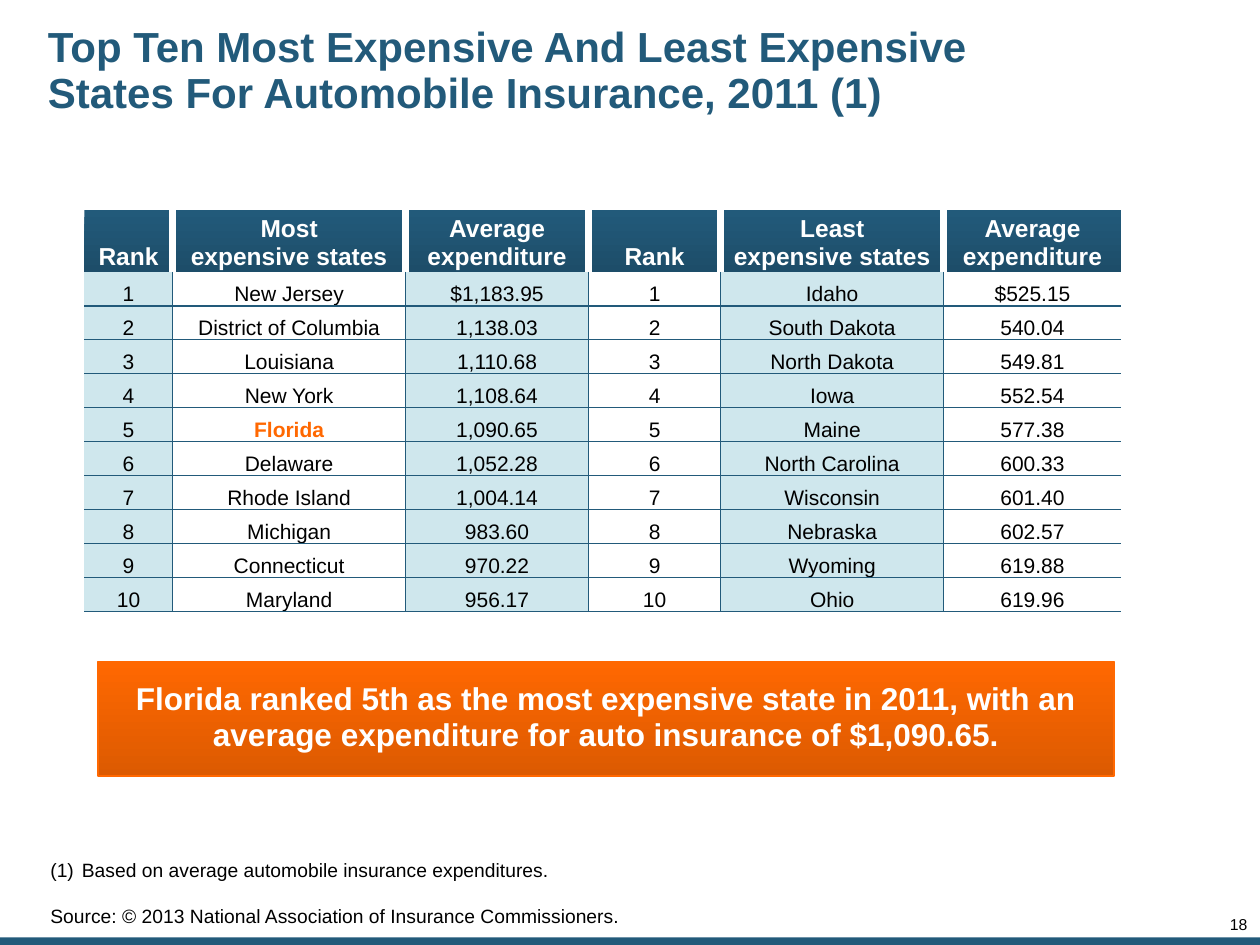
import pptx
import pptx.dml.color
import pptx.enum.shapes
import pptx.enum.text
import pptx.oxml
import pptx.oxml.ns
import pptx.util
from lxml import etree

Inches = pptx.util.Inches
ALIGN = pptx.enum.text.PP_ALIGN
ANCHOR = pptx.enum.text.MSO_ANCHOR
COLORS = {
    "blue": "225A7A", "deep_blue": "1D4D69", "pale": "CFE7ED", "white": "FFFFFF",
    "orange": "FF6801", "deep_orange": "DC5A01", "black": "000000",
}
COLUMN_WIDTHS = [0.7, 1.85, 1.45, 1.05, 1.77, 1.41]
HEADER_HEIGHT, ROW_HEIGHT = 0.46, 0.27
NO_GRID_STYLE = "{2D5ABB26-0587-4C30-8999-92F81FD0307C}"
HEADERS = ["Rank", "Most\nexpensive states", "Average expenditure",
           "Rank", "Least\nexpensive states", "Average\nexpenditure"]
STATES = [
    ("New Jersey", "$1,183.95", "Idaho", "$525.15"),
    ("District of Columbia", "1,138.03", "South Dakota", "540.04"),
    ("Louisiana", "1,110.68", "North Dakota", "549.81"),
    ("New York", "1,108.64", "Iowa", "552.54"),
    ("Florida", "1,090.65", "Maine", "577.38"),
    ("Delaware", "1,052.28", "North Carolina", "600.33"),
    ("Rhode Island", "1,004.14", "Wisconsin", "601.40"),
    ("Michigan", "983.60", "Nebraska", "602.57"),
    ("Connecticut", "970.22", "Wyoming", "619.88"),
    ("Maryland", "956.17", "Ohio", "619.96"),
]


def rgb(name):
    """Return the named colour."""
    return pptx.dml.color.RGBColor.from_string(COLORS[name])


def set_gradient(fill, top, bottom):
    """Fill from the top colour down to the bottom colour."""
    fill.gradient()
    fill.gradient_angle = 270
    for stop, name in zip(fill.gradient_stops, (top, bottom)):
        stop.color.rgb = rgb(name)


def set_text(tf, text, size, color, bold=False, align=ALIGN.LEFT, spacing=1.0):
    """Write text and format every paragraph and run alike."""
    tf.text = text
    for p in tf.paragraphs:
        p.alignment, p.line_spacing = align, spacing
        for r in p.runs:
            r.font.name, r.font.size, r.font.bold = "Arial", pptx.util.Pt(size), bold
            r.font.color.rgb = rgb(color)


def set_frame(tf, anchor, insets):
    """Set wrapping, anchor and left, top, right, bottom insets."""
    tf.word_wrap, tf.vertical_anchor = True, anchor
    tf.margin_left, tf.margin_top, tf.margin_right, tf.margin_bottom = map(Inches, insets)


def add_text(s, box, text, anchor, insets, **style):
    """Add a text box and return its frame."""
    tf = s.shapes.add_textbox(*map(Inches, box)).text_frame
    set_frame(tf, anchor, insets)
    set_text(tf, text, **style)
    return tf


def add_rect(s, box):
    """Add a rectangle without shadow."""
    sp = s.shapes.add_shape(pptx.enum.shapes.MSO_SHAPE.RECTANGLE, *map(Inches, box))
    sp.shadow.inherit = False
    return sp


def add_footer_bar(s):
    """Add the bar along the bottom edge."""
    sp = add_rect(s, (0, 7.44, 10, 0.06))
    sp.fill.solid()
    sp.fill.fore_color.rgb = rgb("blue")
    sp.line.fill.background()


def add_callout(s, box, text):
    """Add the orange conclusion box."""
    sp = add_rect(s, box)
    set_gradient(sp.fill, "orange", "deep_orange")
    sp.line.color.rgb, sp.line.width = rgb("orange"), pptx.util.Pt(1)
    set_frame(sp.text_frame, ANCHOR.MIDDLE, (0.1, 0.05, 0.1, 0.07))
    set_text(sp.text_frame, text, 18, "white", True, ALIGN.CENTER, 0.95)


def add_borders(cell, sides, color, width):
    """Draw solid borders on the given sides, listed in L, R, T, B order."""
    tc_pr = cell._tc.get_or_add_tcPr()
    qn = pptx.oxml.ns.qn
    for side in sides:
        ln = etree.SubElement(tc_pr, qn("a:ln" + side), w=str(pptx.util.Pt(width)))
        fill = etree.SubElement(ln, qn("a:solidFill"))
        etree.SubElement(fill, qn("a:srgbClr"), val=COLORS[color])


def format_cell(cell, text, row, col):
    """Write and style one header or body cell."""
    is_header = row == 0
    sides = ("L" if col > 0 else "") + ("R" if col < len(HEADERS) - 1 else "")
    cell.vertical_anchor = ANCHOR.BOTTOM
    cell.margin_left = cell.margin_top = cell.margin_right = Inches(0.01)
    cell.margin_bottom = Inches(0.01 if is_header else 0)
    if is_header:
        set_text(cell.text_frame, text, 14, "white", True, ALIGN.CENTER)
        add_borders(cell, sides, "white", 4.5)
        set_gradient(cell.fill, "blue", "deep_blue")
        return
    highlight = text == "Florida"
    set_text(cell.text_frame, text, 12, "orange" if highlight else "black",
             highlight, ALIGN.CENTER)
    add_borders(cell, sides + ("TB" if row > 1 else "B"), "blue", 1)
    cell.fill.solid()
    cell.fill.fore_color.rgb = rgb("white" if col % 2 else "pale")


def add_ranking_table(s, left, top):
    """Add the table of most and least expensive states."""
    rows = [HEADERS] + [
        (str(rank), most, high, str(rank), least, low)
        for rank, (most, high, least, low) in enumerate(STATES, 1)
    ]
    height = HEADER_HEIGHT + ROW_HEIGHT * len(STATES)
    table = s.shapes.add_table(len(rows), len(HEADERS), Inches(left), Inches(top),
                               Inches(sum(COLUMN_WIDTHS)), Inches(height)).table
    table.horz_banding = False
    table._tbl.tblPr.find(pptx.oxml.ns.qn("a:tableStyleId")).text = NO_GRID_STYLE
    for column, width in zip(table.columns, COLUMN_WIDTHS):
        column.width = Inches(width)
    for i, values in enumerate(rows):
        table.rows[i].height = Inches(ROW_HEIGHT if i else HEADER_HEIGHT)
        for j, text in enumerate(values):
            format_cell(table.cell(i, j), text, i, j)


def add_footnotes(s):
    """Add the numbered note and the source line."""
    tf = add_text(s, (0, 6.8, 8.32, 0.71),
                  "Based on average automobile insurance expenditures.\n"
                  "Source: © 2013 National Association of Insurance Commissioners.",
                  ANCHOR.BOTTOM, (0.4, 0, 0, 0.15), size=11, color="black")
    note, source = tf.paragraphs
    p_pr = note._p.get_or_add_pPr()
    p_pr.set("marL", str(Inches(0.25)))
    p_pr.set("indent", str(Inches(-0.25)))
    etree.SubElement(p_pr, pptx.oxml.ns.qn("a:buAutoNum"), type="arabicParenBoth")
    source.space_before = pptx.util.Pt(13)


def main():
    """Build and save the slide."""
    prs = pptx.Presentation()
    prs.slide_width, prs.slide_height = Inches(10), Inches(7.5)
    s = prs.slides.add_slide(prs.slide_layouts[6])
    add_footer_bar(s)
    add_text(s, (9.41, 7.28, 0.49, 0.13), "18", ANCHOR.TOP, (0, 0, 0, 0),
             size=9, color="black", align=ALIGN.RIGHT, spacing=0.85)
    add_text(s, (0.33, 0.1, 8.09, 0.94),
             "Top Ten Most Expensive And Least Expensive States For Automobile Insurance, 2011 (1)",
             ANCHOR.MIDDLE, (0.05, 0.05, 0.05, 0.05),
             size=24, color="blue", bold=True, spacing=0.9)
    add_ranking_table(s, 0.67, 1.67)
    add_footnotes(s)
    add_callout(s, (0.78, 5.25, 8.06, 0.91),
                "Florida ranked 5th as the most expensive state in 2011, with an "
                "average expenditure for auto insurance of $1,090.65.")
    prs.save("out.pptx")


if __name__ == "__main__":
    main()
